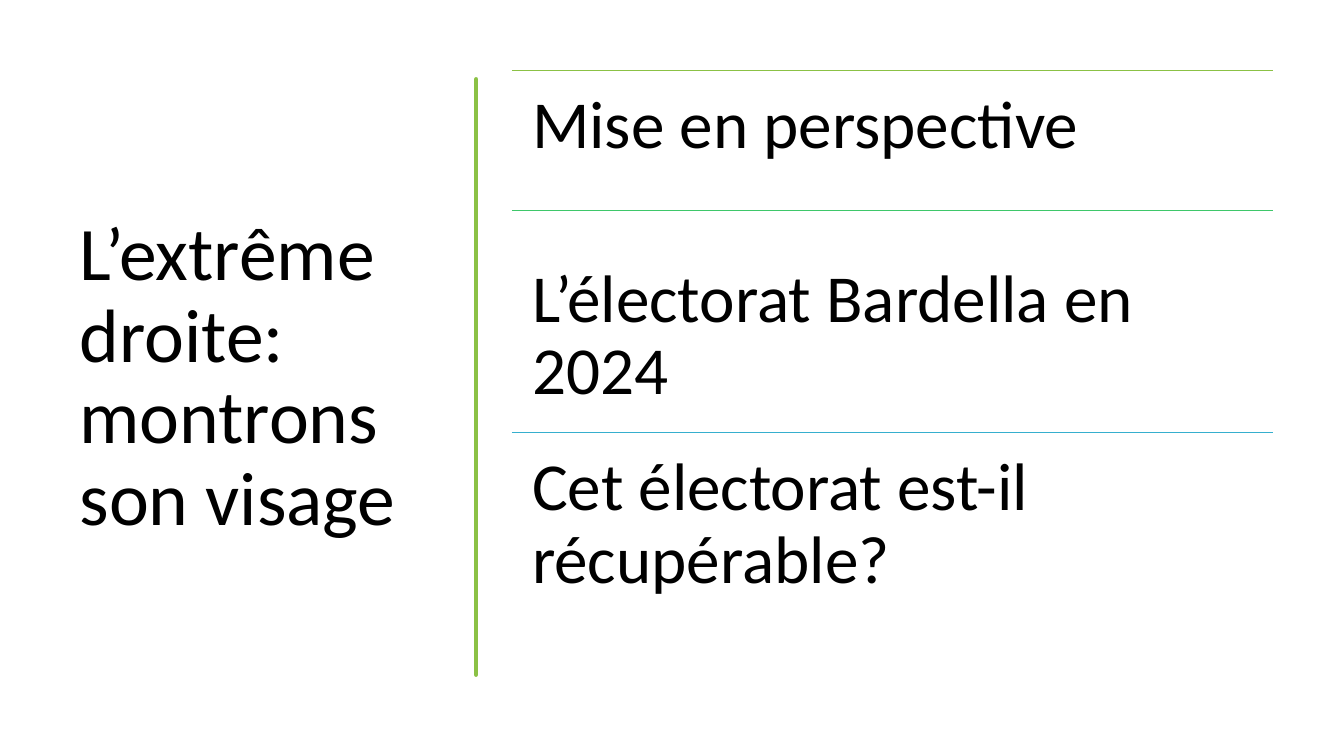
from lxml.etree import SubElement
from pptx import Presentation
from pptx.dml.color import RGBColor
from pptx.enum.shapes import MSO_CONNECTOR
from pptx.enum.text import MSO_ANCHOR, MSO_AUTO_SIZE, PP_ALIGN
from pptx.oxml.ns import qn
from pptx.util import Cm, Pt

COLORS = {"text": "000000", "lime": "8BC145", "green": "3EC76A", "blue": "36AFCE"}

# Agenda: text, rule colour, rule top, text top, text height (cm)
AGENDA = [
    ("Mise en perspective", "lime", 1.78, 1.78, 4.37),
    ("L’électorat Bardella en 2024", "green", 5.31, 6.15, 4.75),
    ("Cet électorat est-il récupérable?", "blue", 10.9, 10.9, 6.25),
]
AGENDA_LEFT, AGENDA_WIDTH = 12.9, 19.17

# Hand-drawn bar: (x, y) down the right edge, then up the left edge (cm)
BAR_RIGHT = [(12.06, 2.13), (12.1, 2.8), (12.08, 3.6), (12.04, 4.4), (12.06, 5.7),
             (12.05, 7.4), (12.08, 8.5), (12.07, 9.1), (12.1, 10.3), (12.09, 10.9),
             (12.03, 11.7), (12.06, 12.9), (12.1, 13.9), (12.06, 15.2), (12.06, 17.17)]
BAR_LEFT = [(12.0, 17.17), (11.98, 16.2), (12.01, 14.9), (11.98, 13.4), (11.99, 12.1),
            (12.02, 11.0), (12.03, 10.2), (11.97, 9.2), (12.02, 8.0), (11.98, 6.7),
            (12.02, 5.2), (11.96, 4.4), (12.02, 3.2), (12.0, 2.13)]


class SlideBuilder:
    font_name = "Calibri"
    line_spacing = 0.9

    def __init__(self, presentation):
        self.slide = presentation.slides.add_slide(presentation.slide_layouts[5])

    def color(self, name):
        return RGBColor.from_string(COLORS[name])

    def set_text(self, shape, text, size, anchor):
        frame = shape.text_frame
        frame.text = text
        frame.word_wrap = True
        frame.auto_size = MSO_AUTO_SIZE.NONE
        frame.vertical_anchor = anchor
        paragraph = frame.paragraphs[0]
        paragraph.alignment = PP_ALIGN.LEFT
        paragraph.line_spacing = self.line_spacing
        paragraph.font.name = self.font_name
        paragraph.font.size = Pt(size)
        paragraph.font.color.rgb = self.color("text")
        return frame

    def title(self, text, left, top, width, height):
        shape = self.slide.shapes.title
        shape.left, shape.top = Cm(left), Cm(top)
        shape.width, shape.height = Cm(width), Cm(height)
        self.set_text(shape, text, 54, MSO_ANCHOR.MIDDLE)

    def text(self, text, left, top, width, height, inset=0.51):
        shape = self.slide.shapes.add_textbox(Cm(left), Cm(top), Cm(width), Cm(height))
        frame = self.set_text(shape, text, 48, MSO_ANCHOR.TOP)
        frame.margin_left = frame.margin_right = Cm(inset)
        frame.margin_top = frame.margin_bottom = Cm(inset)

    def rule(self, left, top, width, color):
        line = self.slide.shapes.add_connector(
            MSO_CONNECTOR.STRAIGHT, Cm(left), Cm(top), Cm(left + width), Cm(top))
        line.line.color.rgb = self.color(color)
        line.line.width = Pt(1)
        SubElement(line._element.spPr, qn("a:effectLst"))

    def outline(self, points, color):
        start, *others = points
        builder = self.slide.shapes.build_freeform(*start, scale=Cm(1))
        builder.add_line_segments(others, close=True)
        shape = builder.convert_to_shape()
        shape.shadow.inherit = False
        shape.fill.solid()
        shape.fill.fore_color.rgb = self.color(color)
        shape.line.color.rgb = self.color(color)
        shape.line.width = Pt(3.25)


def main():
    presentation = Presentation()
    presentation.slide_width, presentation.slide_height = Cm(33.87), Cm(19.05)
    builder = SlideBuilder(presentation)

    # Title and vertical bar
    builder.title("L’extrême droite: montrons son visage", 1.75, 1.78, 9.5, 15.52)
    builder.outline(BAR_RIGHT + BAR_LEFT, "lime")

    # Agenda rows
    for text, color, rule_top, text_top, height in AGENDA:
        builder.rule(AGENDA_LEFT, rule_top, AGENDA_WIDTH, color)
        builder.text(text, AGENDA_LEFT, text_top, AGENDA_WIDTH, height)

    presentation.save("out.pptx")


if __name__ == "__main__":
    main()
